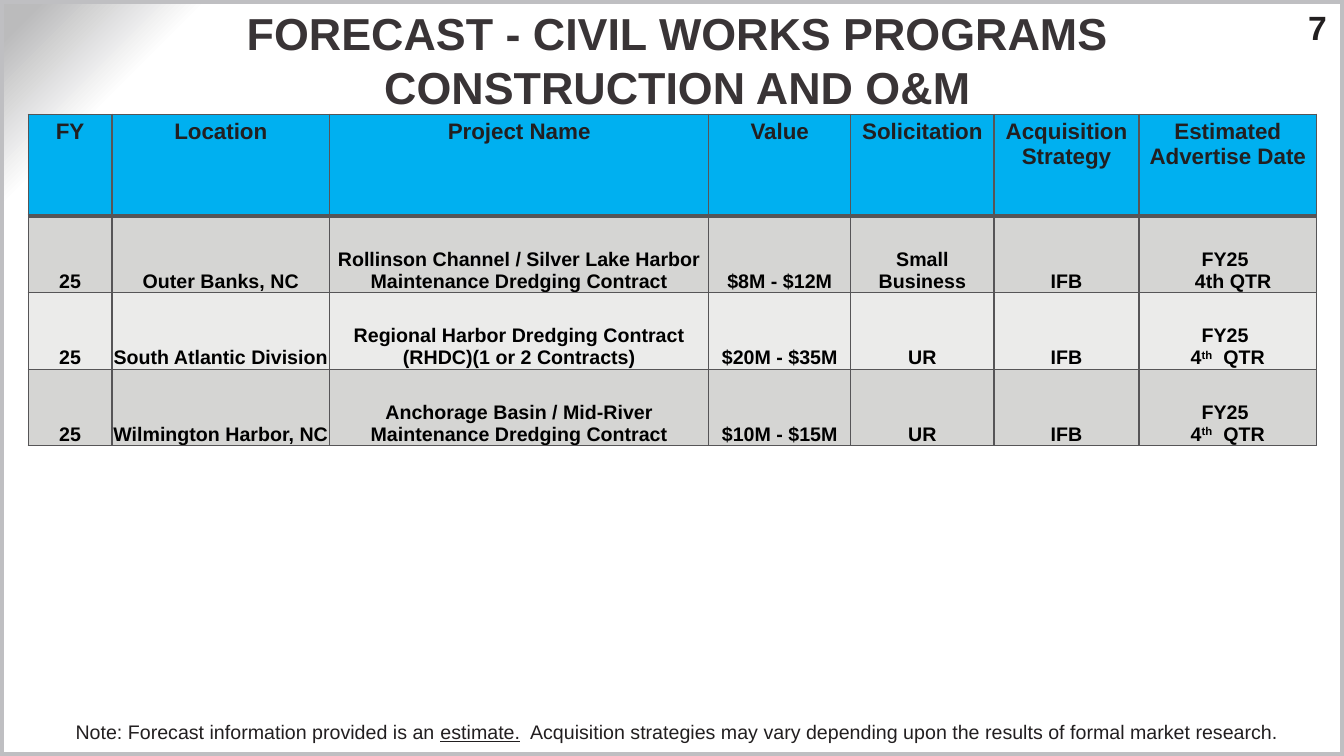
from dataclasses import dataclass, field
from typing import Any

import pptx
import pptx.dml.color
import pptx.enum.shapes
import pptx.enum.text
import pptx.oxml
import pptx.oxml.ns
import pptx.util

ALIGN = pptx.enum.text.PP_ALIGN
ANCHOR = pptx.enum.text.MSO_ANCHOR
INK, GREY, EDGE = "221F20", "BFBFC2", "565557"
HEAD, DARK, LIGHT = "00B0F0", "D5D5D3", "EBEBEA"

deck = pptx.Presentation()
deck.slide_width = pptx.util.Inches(13.33)
deck.slide_height = pptx.util.Inches(7.5)


@dataclass
class Bit:
    text: str
    form: dict[str, Any] = field(default_factory=dict)
    base: int = 0


@dataclass
class Line:
    bits: list[Bit]
    shift: float = 0


@dataclass
class Style:
    size: int
    color: str
    bold: bool = True
    align: Any = ALIGN.CENTER


@dataclass
class Box:
    left: float
    top: float
    width: float
    height: float


def wide(share: float) -> int:
    return round(deck.slide_width * share / 100)


def high(share: float) -> int:
    return round(deck.slide_height * share / 100)


def place(box: Box) -> tuple[int, int, int, int]:
    return wide(box.left), high(box.top), wide(box.width), high(box.height)


def paint(color: str) -> pptx.dml.color.RGBColor:
    return pptx.dml.color.RGBColor.from_string(color)


def apply(item: Any, form: dict[str, Any]) -> None:
    for name, value in form.items():
        setattr(item, name, value)


def pads(left: float, top: float, right: float, base: float) -> dict[str, Any]:
    sides = ("left", "top", "right", "bottom")
    return {f"margin_{side}": pptx.util.Inches(size)
            for side, size in zip(sides, (left, top, right, base))}


def write(frame: Any, lines: list[Line], style: Style) -> None:
    for row, line in enumerate(lines):
        para = frame.add_paragraph() if row else frame.paragraphs[0]
        para.alignment = style.align
        if line.shift:
            para._p.get_or_add_pPr().set("marL", str(wide(line.shift)))
        for bit in line.bits:
            for part, text in enumerate(bit.text.split("\n")):
                if part:
                    para.add_line_break()
                run = para.add_run()
                run.text = text
                apply(run.font, {"name": "Arial", "size": pptx.util.Pt(style.size),
                                 "bold": style.bold, **bit.form})
                run.font.color.rgb = paint(style.color)
                if bit.base:
                    run._r.get_or_add_rPr().set("baseline", str(bit.base * 1000))


def plain(text: str) -> list[Line]:
    return [Line([Bit(text)])]


def label(slide: Any, box: Box, lines: list[Line], style: Style, form: dict[str, Any]) -> None:
    frame = slide.shapes.add_textbox(*place(box)).text_frame
    apply(frame, {"word_wrap": True, **form})
    write(frame, lines, style)


def rule(cell: Any, widths: dict[str, int]) -> None:
    props = cell._tc.get_or_add_tcPr()
    for spot, (side, width) in enumerate(widths.items()):
        props.insert(spot, pptx.oxml.parse_xml(
            f'<a:ln{side} {pptx.oxml.ns.nsdecls("a")} w="{pptx.util.Pt(width)}">'
            f'<a:solidFill><a:srgbClr val="{EDGE}"/></a:solidFill></a:ln{side}>'))


def shade(slide: Any) -> None:
    stops = "".join(f'<a:gs pos="{pos * 1000}"><a:srgbClr val="{color}"/></a:gs>'
                    for pos, color in ((87, "FFFFFF"), (90, "FFFFFF"), (98, "BBBBBC")))
    slide._element.cSld.insert(0, pptx.oxml.parse_xml(
        f'<p:bg {pptx.oxml.ns.nsdecls("p", "a")}><p:bgPr><a:gradFill rotWithShape="1">'
        f'<a:gsLst>{stops}</a:gsLst><a:path path="circle">'
        '<a:fillToRect l="100000" t="100000"/></a:path></a:gradFill>'
        '<a:effectLst/></p:bgPr></p:bg>'))


def border(slide: Any) -> None:
    kind = pptx.enum.shapes.MSO_SHAPE.RECTANGLE
    shape = slide.shapes.add_shape(kind, *place(Box(0, 0, 100, 100)))
    shape.shadow.inherit = False
    shape.fill.background()
    shape.line.color.rgb = paint(GREY)
    shape.line.width = pptx.util.Pt(6)


COLS = [6.23, 16.2, 28.2, 10.58, 10.65, 10.8, 13.2]
ROWS = [13.47] + [10.13] * 3
HEADS = ["FY", "Location", "Project Name", "Value", "Solicitation",
         "Acquisition Strategy", "Estimated Advertise Date"]
WORKS = [
    ["Outer Banks, NC", "Rollinson Channel / Silver Lake Harbor Maintenance Dredging Contract",
     "$8M - $12M", "Small Business"],
    ["South Atlantic Division", "Regional Harbor Dredging Contract (RHDC)(1 or 2 Contracts)",
     "$20M - $35M", "UR"],
    ["Wilmington Harbor, NC", "Anchorage Basin / Mid-River Maintenance Dredging Contract",
     "$10M - $15M", "UR"],
]
YEAR = Line([Bit("FY25 ")])
FIRST = [YEAR, Line([Bit("4th QTR")], 0.8)]
LATER = [YEAR, Line([Bit("4"), Bit("th", base=30), Bit("  QTR")])]


def table(slide: Any) -> None:
    box = Box(2.1, 15.1, sum(COLS), sum(ROWS))
    grid = slide.shapes.add_table(len(ROWS), len(COLS), *place(box)).table
    for col, share in zip(grid.columns, COLS):
        col.width = wide(share)
    for row, share in zip(grid.rows, ROWS):
        row.height = high(share)
    cells = [[plain(text) for text in HEADS]]
    for work, date in zip(WORKS, (FIRST, LATER, LATER)):
        cells.append([plain(text) for text in ["25", *work, "IFB"]] + [date])
    for row, items in enumerate(cells):
        style = Style(14, "000000") if row else Style(16, INK)
        form = {"vertical_anchor": ANCHOR.BOTTOM, **pads(0.01, 0.01, 0.01, 0)} if row else {}
        for col, lines in enumerate(items):
            cell = grid.cell(row, col)
            apply(cell, form)
            rule(cell, {"L": 1, "R": 1, "T": 3 if row == 1 else 1, "B": 1 if row else 3})
            cell.fill.solid()
            cell.fill.fore_color.rgb = paint((DARK if row % 2 else LIGHT) if row else HEAD)
            write(cell.text_frame, lines, style)


def title(slide: Any) -> None:
    shape = slide.shapes.title
    apply(shape, dict(zip(("left", "top", "width", "height"),
                          place(Box(7.8, 1.87, 85.22, 12.13)))))
    apply(shape.text_frame, {"word_wrap": True, "vertical_anchor": ANCHOR.MIDDLE,
                             "auto_size": pptx.enum.text.MSO_AUTO_SIZE.NONE,
                             **pads(0.05, 0, 0.05, 0)})
    write(shape.text_frame, plain("FORECAST - CIVIL WORKS PROGRAMS\nCONSTRUCTION AND O&M"),
          Style(32, "393436"))


def main() -> None:
    slide = deck.slides.add_slide(deck.slide_layouts[5])
    shade(slide)
    label(slide, Box(94.22, 0.93, 4.5, 5.33), plain("7"),
          Style(24, INK, align=ALIGN.RIGHT), pads(0.1, 0, 0, 0))
    border(slide)
    table(slide)
    title(slide)
    note = Line([Bit("Note: Forecast information provided is an "),
                 Bit("estimate.", {"underline": True}),
                 Bit("  Acquisition strategies may vary depending upon the results "
                     "of formal market research.")])
    label(slide, Box(4.88, 94.53, 91.07, 4.53), [note],
          Style(14, INK, False, ALIGN.LEFT), {})
    deck.save("out.pptx")


if __name__ == "__main__":
    main()
